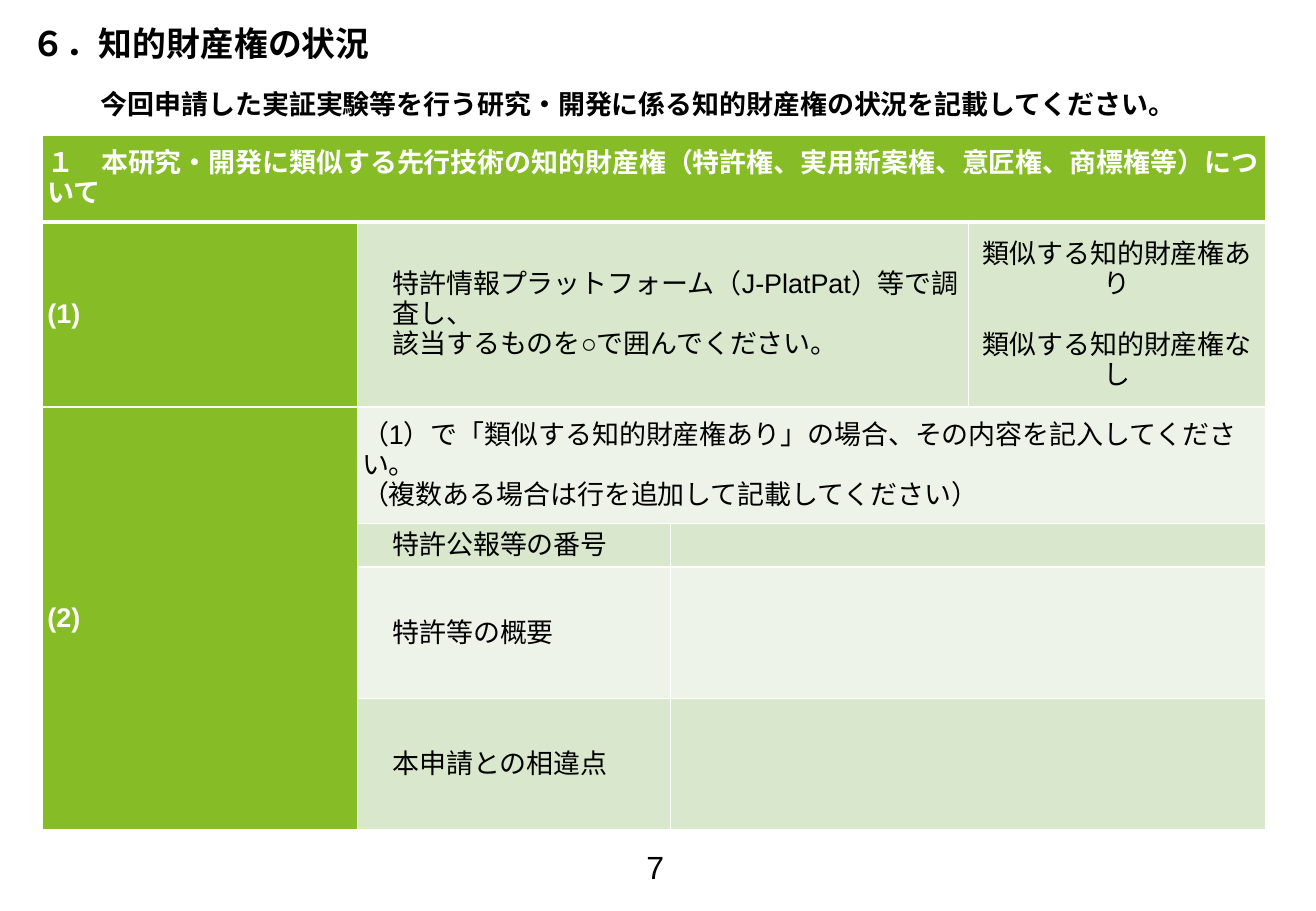
import pptx
import pptx.dml.color
import pptx.enum.text
import pptx.oxml
import pptx.oxml.ns
import pptx.util
from pptx.util import Inches

GREEN, PALE, PALER = "86BC25", "D9E7CD", "EDF3E8"
WHITE, BLACK = "FFFFFF", "000000"
COLS = [2.59, 2.58, 2.45, 2.45]
ROWS = [0.72, 1.52, 0.96, 0.36, 1.08, 1.08]
INDENT = 0.25

# Row, column, row span, column span, fill, paragraphs, left indent
CELLS = [
    (0, 0, 1, 4, GREEN, ["１　本研究・開発に類似する先行技術の知的財産権（特許権、実用新案権、意匠権、商標権等）について"], 0),
    (1, 0, 1, 1, GREEN, ["(1)"], 0),
    (1, 1, 1, 2, PALE, ["特許情報プラットフォーム（J-PlatPat）等で調査し、",
                        "該当するものを○で囲んでください。"], INDENT),
    (1, 3, 1, 1, PALE, ["類似する知的財産権あり", "類似する知的財産権なし"], 0),
    (2, 0, 4, 1, GREEN, ["(2)"], 0),
    (2, 1, 1, 3, PALER, ["（1）で「類似する知的財産権あり」の場合、その内容を記入してください。",
                         "（複数ある場合は行を追加して記載してください）"], 0),
]
# Label rows, each with an empty answer cell
LABELS = [("特許公報等の番号", PALE), ("特許等の概要", PALER), ("本申請との相違点", PALE)]
for row, (label, shade) in enumerate(LABELS, start=3):
    CELLS.append((row, 1, 1, 1, shade, [label], INDENT))
    CELLS.append((row, 2, 1, 2, shade, [""], 0))


def color(value):
    return pptx.dml.color.RGBColor.from_string(value)


def set_font(p, name, size, value, bold=False):
    p.font.name = name
    p.font.size = pptx.util.Pt(size)
    p.font.bold = bold
    p.font.color.rgb = color(value)
    # East Asian typeface, placed after the Latin one
    latin = p._p.pPr.find(".//" + pptx.oxml.ns.qn("a:latin"))
    latin.addnext(pptx.oxml.parse_xml(
        f'<a:ea {pptx.oxml.ns.nsdecls("a")} typeface="{name}"/>'))


def add_text(slide, box, text, name, size, bold=False):
    sp = slide.shapes.add_textbox(*[Inches(v) for v in box])
    tf = sp.text_frame
    tf.word_wrap = True
    p = tf.paragraphs[0]
    p.text = text
    set_font(p, name, size, BLACK, bold)
    return tf


def set_borders(cell, row):
    widths = {"L": 1, "R": 1, "T": 3 if row == 1 else 1, "B": 3 if row == 0 else 1}
    tc_pr = cell._tc.get_or_add_tcPr()
    for side, width in widths.items():
        tc_pr.append(pptx.oxml.parse_xml(
            f'<a:ln{side} {pptx.oxml.ns.nsdecls("a")} w="{pptx.util.Pt(width)}">'
            f'<a:solidFill><a:srgbClr val="{WHITE}"/></a:solidFill></a:ln{side}>'))


def fill_cell(cell, fill, texts, indent):
    cell.vertical_anchor = pptx.enum.text.MSO_ANCHOR.MIDDLE
    cell.text_frame.text = "\n".join(texts)
    for p in cell.text_frame.paragraphs:
        if indent:
            p._p.get_or_add_pPr().set("marL", str(Inches(indent)))
        set_font(p, "Arial", 16, WHITE if fill == GREEN else BLACK, fill == GREEN)


def add_rights_table(slide):
    frame = slide.shapes.add_table(len(ROWS), len(COLS), Inches(0.35), Inches(1.11),
                                   Inches(sum(COLS)), Inches(sum(ROWS)))
    table = frame.table
    for column, width in zip(table.columns, COLS):
        column.width = Inches(width)
    for row, height in zip(table.rows, ROWS):
        row.height = Inches(height)

    for r, c, down, across, fill, texts, indent in CELLS:
        cell = table.cell(r, c)
        if down * across > 1:
            cell.merge(table.cell(r + down - 1, c + across - 1))
        for i in range(r, r + down):
            for j in range(c, c + across):
                part = table.cell(i, j)
                part.margin_left = part.margin_right = Inches(0.04)
                part.margin_top = part.margin_bottom = 0
                set_borders(part, i)
                part.fill.solid()
                part.fill.fore_color.rgb = color(fill)
        fill_cell(cell, fill, texts, indent)

    # Two centred choices, set apart by one line
    choices = table.cell(1, 3).text_frame.paragraphs
    for p in choices:
        p.alignment = pptx.enum.text.PP_ALIGN.CENTER
    choices[1].space_before = pptx.util.Pt(18)


def main():
    prs = pptx.Presentation()
    prs.slide_width, prs.slide_height = Inches(10.83), Inches(7.5)
    slide = prs.slides.add_slide(prs.slide_layouts[6])

    # Heading and instruction
    add_text(slide, (0.16, 0.14, 9.92, 0.48), "６．知的財産権の状況", "Calibri", 20, True)
    tf = add_text(slide, (0.75, 0.62, 9.2, 0.47),
                  "今回申請した実証実験等を行う研究・開発に係る知的財産権の状況を記載してください。",
                  "Calibri", 16, True)
    tf.vertical_anchor = pptx.enum.text.MSO_ANCHOR.MIDDLE
    tf.margin_left = Inches(0.08)
    tf.margin_top = tf.margin_right = tf.margin_bottom = 0

    add_rights_table(slide)

    # Page number
    add_text(slide, (5.22, 6.93, 0.75, 0.19), "7", "Arial", 19)
    prs.save("out.pptx")


if __name__ == "__main__":
    main()
